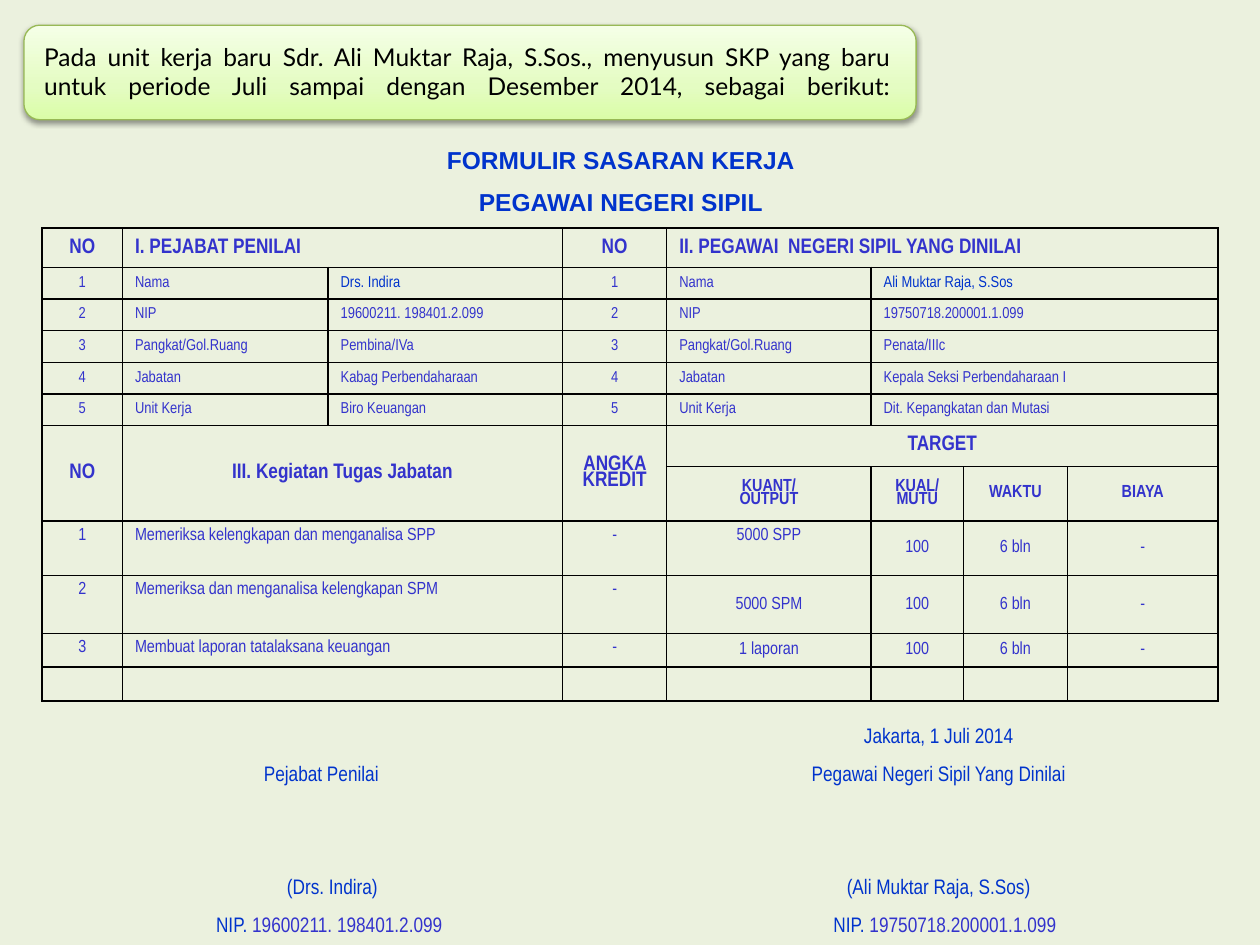
from copy import deepcopy

from lxml import etree
from pptx import Presentation
from pptx.dml.color import RGBColor
from pptx.enum import shapes, text
from pptx.oxml import parse_xml
from pptx.oxml.ns import nsdecls, qn
from pptx.util import Pt

BACKGROUND = RGBColor(0xEB, 0xF1, 0xDE)
BLACK = RGBColor(0, 0, 0)
BLUE = RGBColor(0x00, 0x33, 0xCC)
INDIGO = RGBColor(0x33, 0x33, 0xCC)
GREEN_LINE = RGBColor(0x98, 0xB9, 0x55)
GREEN_STOPS = [(0, RGBColor(0xDA, 0xFD, 0xA7)),
               (0.35, RGBColor(0xE4, 0xFC, 0xC2)),
               (1, RGBColor(0xF5, 0xFF, 0xE7))]
NARROW = "Arial Narrow"
NO_STYLE = "{2D5ABB26-0587-4C30-8999-92F81FD0307C}"
LEFT, CENTER, JUSTIFY = (text.PP_ALIGN.LEFT, text.PP_ALIGN.CENTER,
                         text.PP_ALIGN.JUSTIFY)
TOP, MIDDLE = text.MSO_ANCHOR.TOP, text.MSO_ANCHOR.MIDDLE

INTRO = ("\vPada unit kerja baru Sdr. Ali Muktar Raja, S.Sos., menyusun SKP "
         "yang baru untuk periode Juli sampai dengan Desember 2014, "
         "sebagai berikut:\v")
PEOPLE = [("Nama", "Drs. Indira", "Ali Muktar Raja, S.Sos"),
          ("NIP", "19600211. 198401.2.099", "19750718.200001.1.099"),
          ("Pangkat/Gol.Ruang", "Pembina/IVa", "Penata/IIIc"),
          ("Jabatan", "Kabag Perbendaharaan", "Kepala Seksi Perbendaharaan I"),
          ("Unit Kerja", "Biro Keuangan", "Dit. Kepangkatan dan Mutasi")]
TASKS = [("Memeriksa kelengkapan dan menganalisa SPP", "5000 SPP"),
         ("Memeriksa dan menganalisa kelengkapan SPM", "5000 SPM"),
         ("Membuat laporan tatalaksana keuangan", "1 laporan")]


def style(p, size, color, font=NARROW, bold=False, align=CENTER):
    p.alignment = align
    p.font.size, p.font.name, p.font.bold = Pt(size), font, bold
    p.font.color.rgb = color


def add_intro(slide, x, y, w, h):
    sp = slide.shapes.add_shape(shapes.MSO_SHAPE.ROUNDED_RECTANGLE,
                                Pt(x), Pt(y), Pt(w), Pt(h))
    sp.line.color.rgb, sp.line.width = GREEN_LINE, Pt(0.75)
    sp.fill.gradient()
    sp.fill.gradient_angle = 90
    stops = sp._element.spPr.find(".//" + qn("a:gsLst"))
    stops.insert(1, deepcopy(stops[0]))
    for stop, (position, color) in zip(sp.fill.gradient_stops, GREEN_STOPS):
        stop.position, stop.color.rgb = position, color
    sp._element.spPr.append(parse_xml(
        f'<a:effectLst {nsdecls("a")}><a:outerShdw blurRad="40000" '
        'dist="20000" dir="5400000" rotWithShape="0"><a:srgbClr val="000000">'
        '<a:alpha val="38000"/></a:srgbClr></a:outerShdw></a:effectLst>'))

    title = slide.shapes.title
    title.left, title.top = Pt(x + 4.3), Pt(y + 2.2)
    title.width, title.height = Pt(w - 11.5), Pt(h - 5.8)
    sp._element.addnext(title._element)
    tf = title.text_frame
    tf.auto_size, tf.vertical_anchor = text.MSO_AUTO_SIZE.NONE, MIDDLE
    p = tf.paragraphs[0]
    p.text = INTRO
    style(p, 14, BLACK, "Lato", align=JUSTIFY)


def add_form_title(slide, x, y, w, h):
    tf = slide.shapes.add_textbox(Pt(x), Pt(y), Pt(w), Pt(h)).text_frame
    tf.word_wrap, tf.vertical_anchor = True, MIDDLE
    tf.text = "FORMULIR SASARAN KERJA\nPEGAWAI NEGERI SIPIL"
    for p in tf.paragraphs:
        style(p, 14, BLUE, "Arial", True)
    p.space_before = Pt(7)


def add_plain_table(slide, x, y, widths, heights):
    """Add a table without style whose empty cells hold small text."""
    table = slide.shapes.add_table(len(heights), len(widths), Pt(x), Pt(y),
                                   Pt(sum(widths)), Pt(sum(heights))).table
    table.first_row = table.horz_banding = False
    table._tbl.tblPr.find(qn("a:tableStyleId")).text = NO_STYLE
    for column, width in zip(table.columns, widths):
        column.width = Pt(width)
    for row, height in zip(table.rows, heights):
        row.height = Pt(height)
    for cell in table.iter_cells():
        cell.fill.background()
        p = cell.text_frame.paragraphs[0]
        style(p, 10, INDIGO)
        p._p.get_or_add_endParaRPr().set("sz", "1000")
    return table


def add_borders(cell):
    tc_pr = cell._tc.get_or_add_tcPr()
    for i, side in enumerate(("lnL", "lnR", "lnT", "lnB")):
        line = parse_xml(f'<a:{side} {nsdecls("a")} w="12700"><a:solidFill/>'
                         f'</a:{side}>')
        etree.SubElement(line[0], qn("a:srgbClr"), val=str(BLACK))
        tc_pr.insert(i, line)


def put(cell, words, size=10, color=INDIGO, bold=False, align=CENTER,
        anchor=MIDDLE, spacing=None):
    cell.vertical_anchor = anchor
    cell.text_frame.text = words
    for p in cell.text_frame.paragraphs:
        style(p, size, color, bold=bold, align=align)
        if spacing:
            p.line_spacing = spacing


def add_form(slide, x, y):
    widths = [46, 117.5, 134, 59.5, 116.8, 52.7, 59.5, 86]
    heights = [22.5] + [18.1] * 5 + [23.5, 31.1, 31.2, 33, 19.3, 19.3]
    table = add_plain_table(slide, x, y, widths, heights)
    for cell in table.iter_cells():
        add_borders(cell)
    merges = [(0, 1, 0, 2), (0, 4, 0, 7), (6, 0, 7, 0), (6, 1, 7, 2),
              (6, 3, 7, 3), (6, 4, 6, 7)]
    merges += [(r, 5, r, 7) for r in range(1, 6)]
    merges += [(r, 1, r, 2) for r in range(8, 12)]
    for top, left, bottom, right in merges:
        table.cell(top, left).merge(table.cell(bottom, right))

    for c, words, align in [(0, "NO", CENTER),
                            (1, "I. PEJABAT PENILAI", LEFT),
                            (3, "NO", CENTER),
                            (4, "II. PEGAWAI  NEGERI SIPIL YANG DINILAI",
                             LEFT)]:
        put(table.cell(0, c), words, 12, bold=True, align=align)
    for r, (label, assessor, employee) in enumerate(PEOPLE, 1):
        for c, value in ((0, assessor), (3, employee)):
            put(table.cell(r, c), str(r), 9)
            put(table.cell(r, c + 1), label, 9, align=JUSTIFY)
            put(table.cell(r, c + 2), value, 9, BLUE if r == 1 else INDIGO,
                align=LEFT)

    for c, words in [(0, "NO"), (1, "III. Kegiatan Tugas Jabatan"),
                     (3, "ANGKA KREDIT"), (4, "TARGET")]:
        put(table.cell(6, c), words, 12, bold=True, spacing=0.8)
    for c, words in enumerate(["KUANT/\nOUTPUT", "KUAL/ MUTU", "WAKTU",
                               "BIAYA"], 4):
        put(table.cell(7, c), words, bold=True, spacing=0.8)
    for r, (task, output) in enumerate(TASKS, 8):
        put(table.cell(r, 0), str(r - 7), anchor=TOP)
        put(table.cell(r, 1), task, align=LEFT, anchor=TOP)
        put(table.cell(r, 3), "-", anchor=TOP)
        put(table.cell(r, 4), output, anchor=TOP if r == 8 else MIDDLE)
        for c, words in enumerate(["100", "6 bln", "-"], 5):
            put(table.cell(r, c), words)


def add_signatures(slide, x, y):
    table = add_plain_table(slide, x, y, [282.2, 70.6, 282.2], [21.6] * 6)
    for r, c, words in [(0, 2, "Jakarta, 1 Juli 2014"),
                        (1, 0, "Pejabat Penilai"),
                        (1, 2, "Pegawai Negeri Sipil Yang Dinilai"),
                        (4, 2, "(Ali Muktar Raja, S.Sos)")]:
        put(table.cell(r, c), words, 12, BLUE, anchor=TOP)
    name = table.cell(4, 0)
    put(name, "(Drs. Indira)", 12, BLUE, align=LEFT, anchor=TOP)
    name.margin_left = Pt(121.5)
    for c, number in ((0, PEOPLE[1][1]), (2, PEOPLE[1][2])):
        cell = table.cell(5, c)
        put(cell, "NIP. ", 12, BLUE, align=LEFT, anchor=TOP)
        cell.margin_left = Pt(81)
        r = cell.text_frame.paragraphs[0].add_run()
        r.text = number
        r.font.color.rgb = INDIGO


def main():
    prs = Presentation()
    prs.slide_width, prs.slide_height = Pt(720), Pt(540)
    slide = prs.slides.add_slide(prs.slide_layouts[5])
    slide.background.fill.solid()
    slide.background.fill.fore_color.rgb = BACKGROUND
    add_intro(slide, 13.7, 14.4, 509.8, 54)
    add_form_title(slide, 182, 78.5, 345.6, 49.7)
    add_form(slide, 24, 130.3)
    add_signatures(slide, 42.5, 412.6)
    prs.save("out.pptx")


if __name__ == "__main__":
    main()
